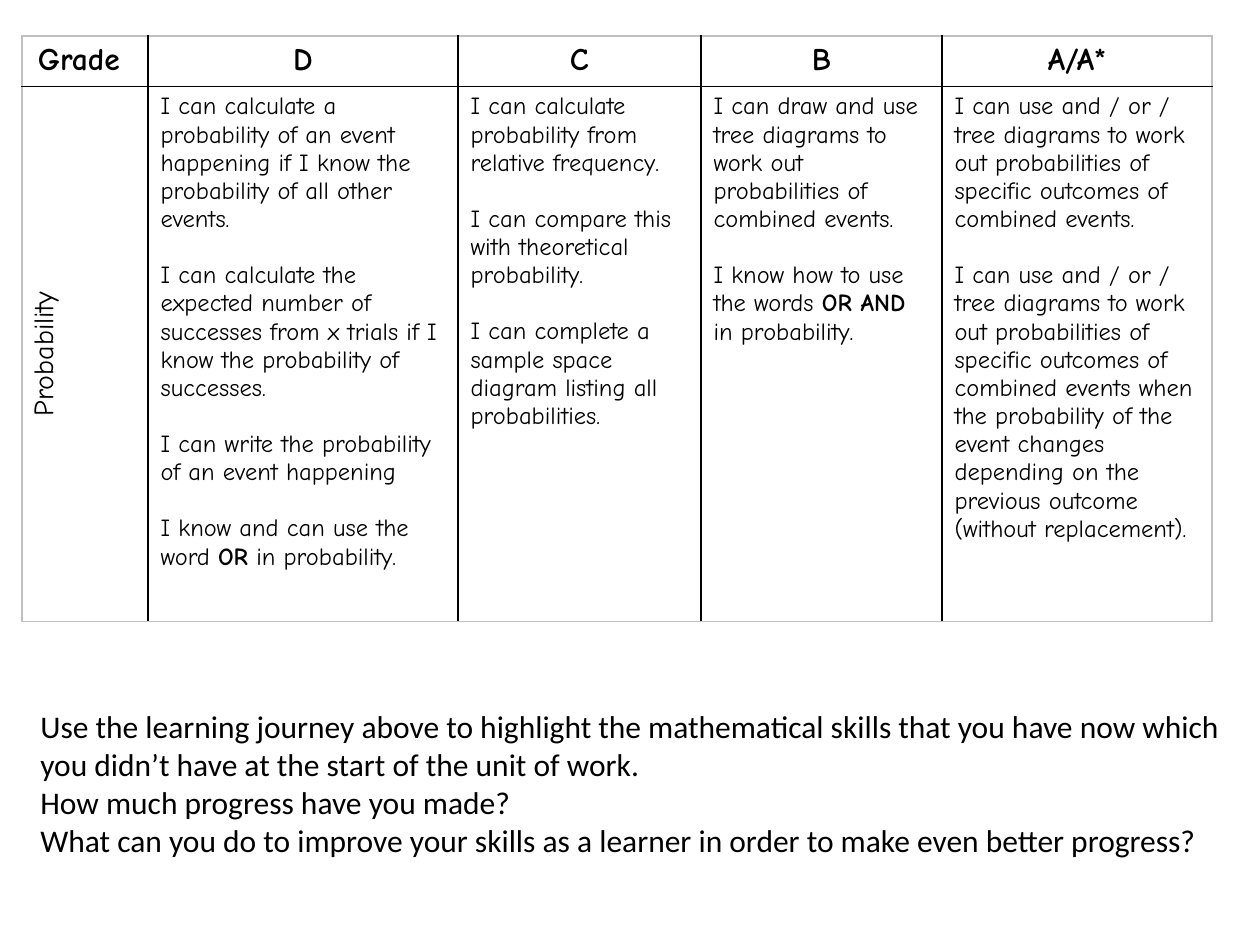
from lxml import etree
from pptx import Presentation
from pptx import util as u
from pptx.dml.color import RGBColor
from pptx.enum import text
from pptx.oxml import ns

BLACK = RGBColor(0, 0, 0)
GREY = RGBColor(0xC0, 0xC0, 0xC0)
PX = 914400 / 126


def px(length):
    return u.Emu(round(length * PX))


def add_span(para, words, font, size, bold=False):
    span = para.add_run()
    span.text = words
    span.font.name = font
    span.font.size = u.Pt(size)
    span.font.bold = bold
    span.font.color.rgb = BLACK


COLUMNS = [126, 310, 243, 241, 270]
ROWS = [50, 535]
GRADES = ["Grade", "D", "C", "B", "A/A*"]
SKILLS = [
    [
        ["I can calculate a probability of an event happening if I know the probability of all other events."],
        ["I can calculate the expected number of successes from x trials if I know the probability of successes."],
        ["I can write the probability of an event happening"],
        ["I know and can use the word ", "OR", " in probability."],
    ],
    [
        ["I can calculate probability from relative frequency."],
        ["I can compare this with theoretical probability."],
        ["I can complete a sample space diagram listing all probabilities."],
    ],
    [
        ["I can draw and use tree diagrams to work out probabilities of combined events."],
        ["I know how to use the words ", "OR AND", " in probability."],
    ],
    [
        ["I can use and / or / tree diagrams to work out probabilities of specific outcomes of combined events."],
        ["I can use and / or / tree diagrams to work out probabilities of specific outcomes of combined events "
         "when the probability of the event changes depending on the previous outcome (without replacement)."],
    ],
]
QUESTIONS = [
    "Use the learning journey above to highlight the mathematical skills that you have now which "
    "you didn’t have at the start of the unit of work.",
    "How much progress have you made?",
    "What can you do to improve your skills as a learner in order to make even better progress?",
]

deck = Presentation()
deck.slide_width = px(1260)
deck.slide_height = px(945)
page = deck.slides.add_slide(deck.slide_layouts[6])

box = page.shapes.add_textbox(px(28), px(701), px(1230), px(204))
box.text_frame.word_wrap = True
for index, question in enumerate(QUESTIONS):
    para = box.text_frame.paragraphs[0] if index == 0 else box.text_frame.add_paragraph()
    add_span(para, question, "Calibri", 18)

table = page.shapes.add_table(
    len(ROWS), len(COLUMNS), px(22), px(36), px(sum(COLUMNS)), px(sum(ROWS))
).table
for column, width in zip(table.columns, COLUMNS):
    column.width = px(width)
for row, height in zip(table.rows, ROWS):
    row.height = px(height)

for cell, grade in zip(table.rows[0].cells, GRADES):
    para = cell.text_frame.paragraphs[0]
    para.alignment = text.PP_ALIGN.CENTER
    add_span(para, grade, "Comic Neue", 18, True)
table.cell(0, 0).margin_right = px(25)

topic = table.cell(1, 0)
topic.text_frame.paragraphs[0].alignment = text.PP_ALIGN.CENTER
add_span(topic.text_frame.paragraphs[0], "Probability", "Comic Neue", 16)
topic._tc.get_or_add_tcPr().set("vert", "vert270")

for column, skills in enumerate(SKILLS, start=1):
    frame = table.cell(1, column).text_frame
    for index, skill in enumerate(skills):
        para = frame.paragraphs[0]
        if index:
            para = frame.add_paragraph()
            para.space_before = u.Pt(16)
        for part, words in enumerate(skill):
            add_span(para, words, "Comic Neue", 14, part == 1)

for r in range(len(ROWS)):
    for c in range(len(COLUMNS)):
        cell = table.cell(r, c)
        cell.fill.background()
        outer = {"lnL": c == 0, "lnR": c == len(COLUMNS) - 1, "lnT": r == 0, "lnB": r == len(ROWS) - 1}
        for place, (edge, is_outer) in enumerate(outer.items()):
            line = etree.Element(ns.qn("a:" + edge), w=str(u.Pt(1)))
            fill = etree.SubElement(line, ns.qn("a:solidFill"))
            etree.SubElement(fill, ns.qn("a:srgbClr"), val=str(GREY if is_outer else BLACK))
            cell._tc.tcPr.insert(place, line)

deck.save("out.pptx")
